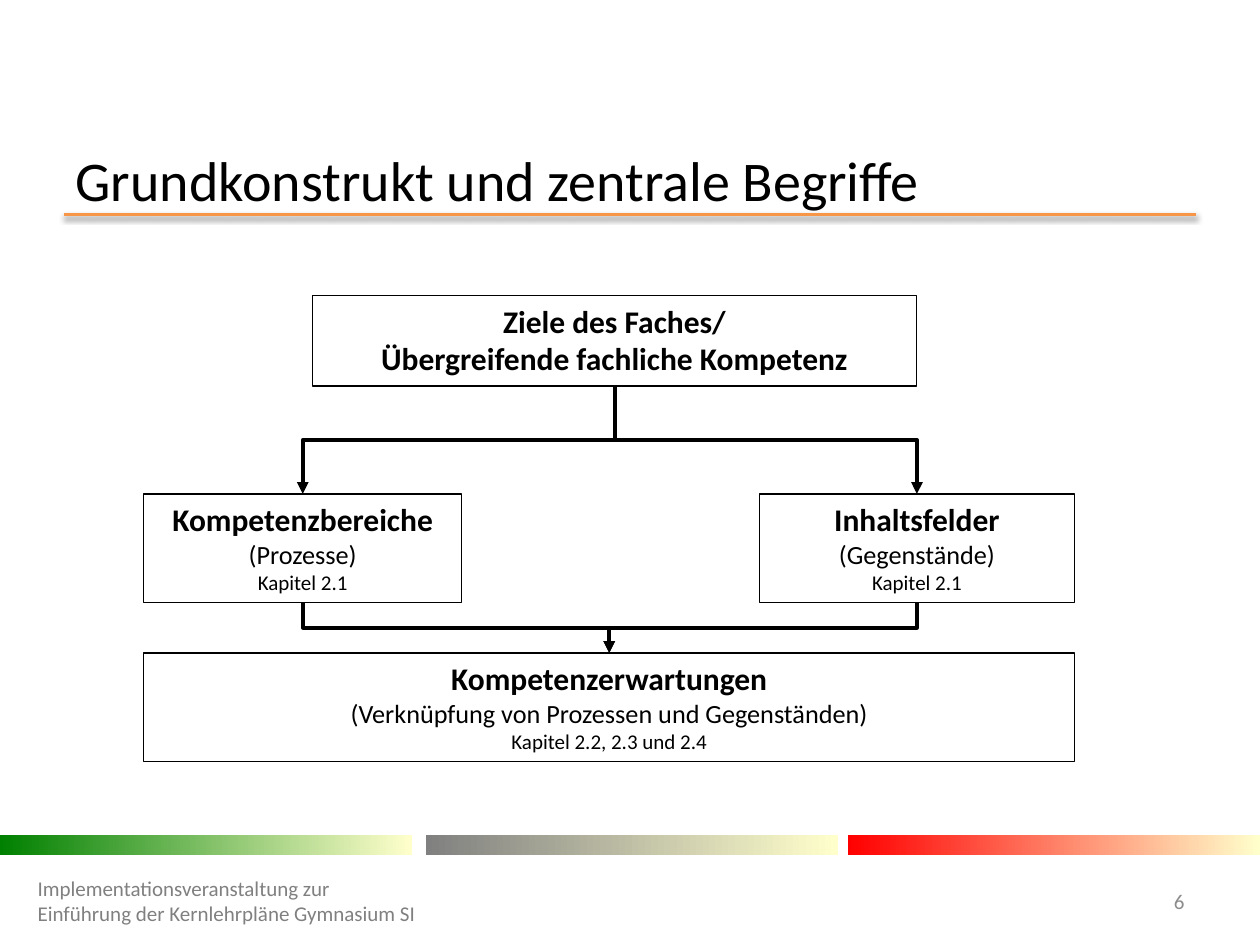
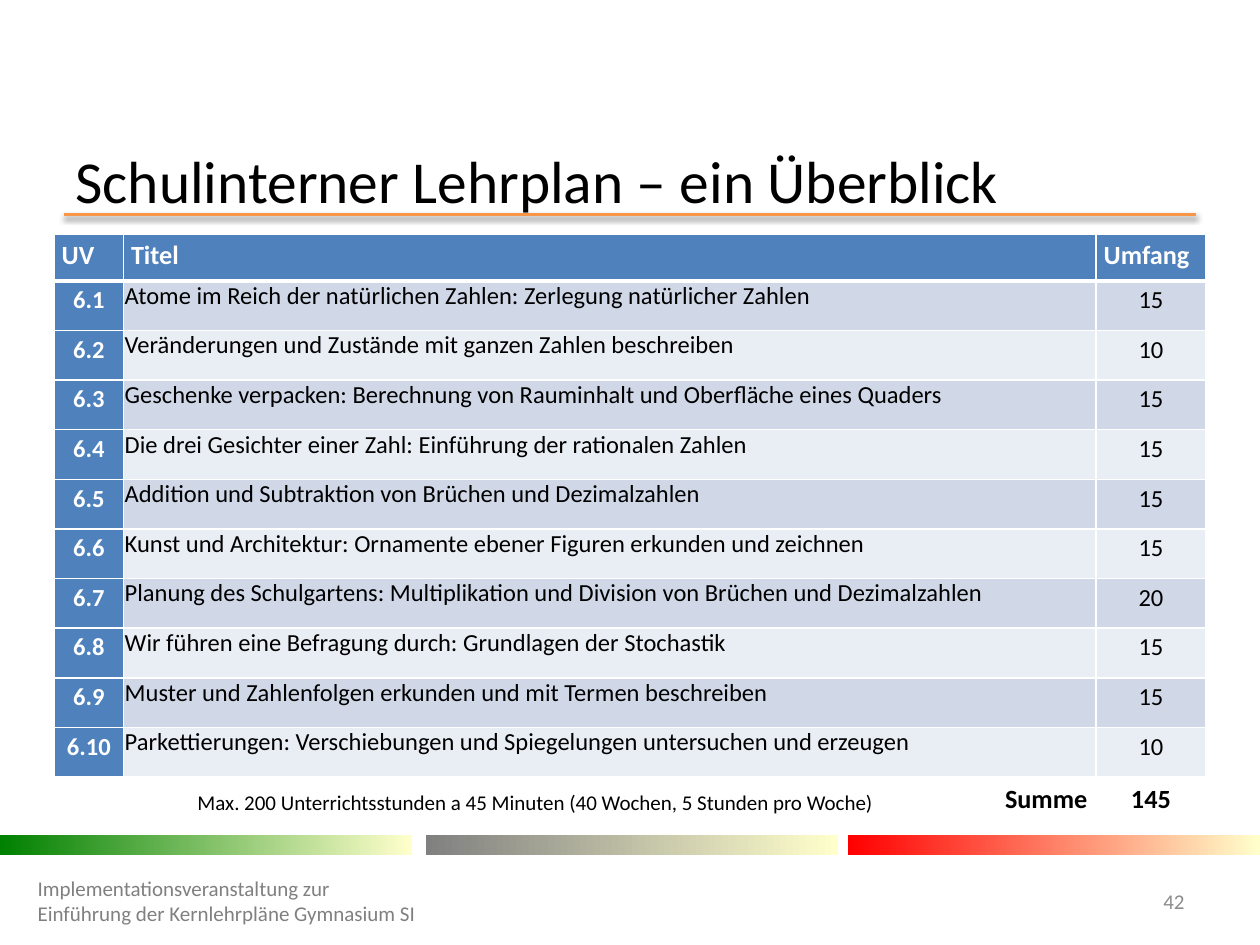
from lxml import etree
from pptx import Presentation, util as u
from pptx.dml.color import RGBColor
from pptx.enum import shapes, text
from pptx.oxml import ns

# The slide is a grid of 100 columns and 75 rows
WIDTH, HEIGHT = u.Inches(10), u.Inches(7.5)
COLUMNS, ROWS = 100, 75
FONT = "Calibri"
COLORS = {
    "ink": "000000", "white": "FFFFFF", "rule": "F79646",
    "footer": "808080", "number": "8C8C8C",
    "green": "008000", "gray": "808080", "red": "FF0000", "cream": "FFFFCC",
    "head": "4F81BD", "odd": "D0D8E8", "even": "E9EDF4",
}
FOOTER = "Implementationsveranstaltung zur Einführung der Kernlehrpläne Gymnasium SI"
LEFT, CENTER, RIGHT = text.PP_ALIGN.LEFT, text.PP_ALIGN.CENTER, text.PP_ALIGN.RIGHT
TOP, MIDDLE, BOTTOM = (text.MSO_ANCHOR.TOP, text.MSO_ANCHOR.MIDDLE,
                       text.MSO_ANCHOR.BOTTOM)
TOP_SITE, BOTTOM_SITE = 0, 2

UNITS = [
    ("6.1", "Atome im Reich der natürlichen Zahlen: Zerlegung natürlicher Zahlen", "15"),
    ("6.2", "Veränderungen und Zustände mit ganzen Zahlen beschreiben", "10"),
    ("6.3", "Geschenke verpacken: Berechnung von Rauminhalt und Oberfläche eines Quaders", "15"),
    ("6.4", "Die drei Gesichter einer Zahl: Einführung der rationalen Zahlen", "15"),
    ("6.5", "Addition und Subtraktion von Brüchen und Dezimalzahlen", "15"),
    ("6.6", "Kunst und Architektur: Ornamente ebener Figuren erkunden und zeichnen", "15"),
    ("6.7", "Planung des Schulgartens: Multiplikation und Division von Brüchen und Dezimalzahlen", "20"),
    ("6.8", "Wir führen eine Befragung durch: Grundlagen der Stochastik", "15"),
    ("6.9", "Muster und Zahlenfolgen erkunden und mit Termen beschreiben", "15"),
    ("6.10", "Parkettierungen: Verschiebungen und Spiegelungen untersuchen und erzeugen", "10"),
]


def col(count):
    return round(WIDTH * count / COLUMNS)


def row(count):
    return round(HEIGHT * count / ROWS)


def area(left, top, width, height):
    return col(left), row(top), col(width), row(height)


def color(name):
    return RGBColor.from_string(COLORS[name])


def format_font(font, size, ink="ink", bold=False):
    font.name, font.size, font.bold = FONT, u.Pt(size), bold
    font.color.rgb = color(ink)


def format_para(para, size, ink="ink", bold=False, align=LEFT):
    para.alignment = align
    format_font(para.font, size, ink, bold)


# Shared frame: title, rule, colour bands, footer
def add_label(page, place, words, ink, align=LEFT):
    frame = page.shapes.add_textbox(*area(*place)).text_frame
    frame.word_wrap = True
    frame.vertical_anchor = MIDDLE
    frame.text = words
    format_para(frame.paragraphs[0], 12, ink, align=align)


def set_effects(line):
    """Replace the theme's shadow by an own, empty effect list."""
    return etree.SubElement(line._element.spPr, ns.qn("a:effectLst"))


def add_rule(page):
    rule = page.shapes.add_connector(
        shapes.MSO_CONNECTOR.STRAIGHT, col(5.1), row(17.03), col(94.9), row(17.03))
    rule.line.color.rgb = color("rule")
    rule.line.width = u.Pt(2)
    shadow = etree.SubElement(set_effects(rule), ns.qn("a:outerShdw"), blurRad="40000",
                              dist="20000", dir="5400000", rotWithShape="0")
    tint = etree.SubElement(shadow, ns.qn("a:srgbClr"), val=COLORS["ink"])
    etree.SubElement(tint, ns.qn("a:alpha"), val="38000")


def add_bands(page):
    for left, start in ((0, "green"), (33.8, "gray"), (67.3, "red")):
        band = page.shapes.add_shape(shapes.MSO_SHAPE.RECTANGLE,
                                     *area(left, 66.3, 32.7, 1.6))
        band.shadow.inherit = False
        band.line.fill.background()
        band.fill.gradient()
        band.fill.gradient_angle = 0
        for stop, name in zip(band.fill.gradient_stops, (start, "cream")):
            stop.color.rgb = color(name)


def add_page(deck, heading, size, number):
    page = deck.slides.add_slide(deck.slide_layouts.get_by_name("Title Only"))
    title = page.shapes.title
    title.left, title.top, title.width, title.height = area(5, 12.3, 90, 3.9)
    frame = title.text_frame
    frame.text = heading
    frame.auto_size = text.MSO_AUTO_SIZE.NONE
    frame.vertical_anchor = MIDDLE
    format_para(frame.paragraphs[0], size)
    add_rule(page)
    add_bands(page)
    add_label(page, (2, 69.5, 32.4, 4), FOOTER, "footer")
    add_label(page, (88.6, 69.5, 6.4, 4), number, "number", RIGHT)
    return page


# Diagram parts
def add_box(page, place, lines, sizes=(18, 15, 12)):
    box = page.shapes.add_shape(shapes.MSO_SHAPE.RECTANGLE, *area(*place))
    box.shadow.inherit = False
    box.fill.background()
    box.line.color.rgb = color("ink")
    box.line.width = u.Pt(0.75)
    frame = box.text_frame
    frame.vertical_anchor = TOP
    frame.text = "\n".join(lines)
    for para, size in zip(frame.paragraphs, sizes):
        format_para(para, size, bold=size == 18, align=CENTER)
    return box


def add_arrow(page, upper, lower):
    """Elbow arrow from the bottom of one box to the top of another."""
    arrow = page.shapes.add_connector(shapes.MSO_CONNECTOR.ELBOW, 0, 0, 0, 0)
    arrow.begin_connect(upper, BOTTOM_SITE)
    arrow.end_connect(lower, TOP_SITE)
    start_x, end_x = upper.left + upper.width // 2, lower.left + lower.width // 2
    start_y, end_y = upper.top + upper.height, lower.top
    # The elbow leaves downwards, so its frame is turned by a quarter
    arrow.width, arrow.height = end_y - start_y, abs(end_x - start_x)
    arrow.left = (start_x + end_x - arrow.width) // 2
    arrow.top = (start_y + end_y - arrow.height) // 2
    turn = arrow._element.spPr.find(ns.qn("a:xfrm"))
    for flip in ("flipH", "flipV"):
        turn.attrib.pop(flip, None)
    if end_x < start_x:
        turn.set("rot", "5400000")
    else:
        turn.set("rot", "16200000")
        turn.set("flipH", "1")
    arrow.line.color.rgb = color("ink")
    arrow.line.width = u.Pt(2.25)
    etree.SubElement(arrow.line._get_or_add_ln(), ns.qn("a:tailEnd"), type="triangle")
    set_effects(arrow)


def build_concept_page(deck):
    page = add_page(deck, "Grundkonstrukt und zentrale Begriffe", 32, "6")
    goals = add_box(page, (24.8, 23.45, 47.95, 7.2),
                    ("Ziele des Faches/", "Übergreifende fachliche Kompetenz"), (18, 18))
    processes = add_box(page, (11.4, 39.2, 25.25, 8.6),
                        ("Kompetenzbereiche", "(Prozesse)", "Kapitel 2.1"))
    contents = add_box(page, (60.25, 39.2, 25.05, 8.6),
                       ("Inhaltsfelder", "(Gegenstände)", "Kapitel 2.1"))
    expectations = add_box(page, (11.4, 51.82, 73.9, 8.6),
                           ("Kompetenzerwartungen",
                            "(Verknüpfung von Prozessen und Gegenständen)",
                            "Kapitel 2.2, 2.3 und 2.4"))
    for branch in (processes, contents):
        add_arrow(page, goals, branch)
        add_arrow(page, branch, expectations)


# Table parts
def add_border(cell, side, points):
    line = etree.SubElement(cell._tc.get_or_add_tcPr(), ns.qn(f"a:{side}"),
                            w=str(u.Pt(points)))
    fill = etree.SubElement(line, ns.qn("a:solidFill"))
    etree.SubElement(fill, ns.qn("a:srgbClr"), val=COLORS["white"])


def fill_cell(cell, words, fill, size=14, ink="ink", bold=False, align=CENTER,
              spacing=1.15, inset=0.7, anchor=TOP, borders=(1, 1)):
    for side, points in zip(("lnL", "lnR", "lnT", "lnB"), (1, 1, *borders)):
        add_border(cell, side, points)
    cell.fill.solid()
    cell.fill.fore_color.rgb = color(fill)
    cell.margin_left = cell.margin_right = col(inset)
    cell.margin_top = cell.margin_bottom = 0
    cell.vertical_anchor = anchor
    cell.text = words
    para = cell.text_frame.paragraphs[0]
    para.alignment = align
    if spacing:
        para.line_spacing = spacing
    # Run fonts take precedence over the text format of the table style
    for span in para.runs:
        format_font(span.font, size, ink, bold)
    if not words:
        etree.SubElement(para._p, ns.qn("a:endParaRPr"), sz=str(size * 100))


def build_overview_page(deck):
    page = add_page(deck, "Schulinterner Lehrplan – ein Überblick", 34, "42")
    last = len(UNITS) + 1
    table = page.shapes.add_table(last + 1, 4, *area(4.3, 18.6, 91.3, 46.2)).table
    table.horz_banding = False
    for column, width in zip(table.columns, (5.5, 65.4, 11.8, 8.7)):
        column.width = col(width)
    unit_height = (46.2 - 3.7 - 3.1) / len(UNITS)
    for line, height in zip(table.rows, [3.7] + [unit_height] * len(UNITS) + [3.1]):
        line.height = row(height)
    for index in range(last):
        table.cell(index, 1).merge(table.cell(index, 2))

    # Heading row
    for index, words in zip((0, 1, 3), ("UV", "Titel", "Umfang")):
        fill_cell(table.cell(0, index), words, "head", 15, "white", True, LEFT,
                  inset=0.6, borders=(1, 3))

    # One row for each teaching unit
    for index, (unit, topic, hours) in enumerate(UNITS, 1):
        shade = "odd" if index % 2 else "even"
        borders = (3 if index == 1 else 1, 1)
        fill_cell(table.cell(index, 0), unit, "head", ink="white", bold=True,
                  borders=borders)
        fill_cell(table.cell(index, 1), topic, shade, align=LEFT, spacing=None,
                  inset=0.1, borders=borders)
        fill_cell(table.cell(index, 3), hours, shade, borders=borders)

    # Sum row
    note = "Max. 200 Unterrichtsstunden a 45 Minuten (40 Wochen, 5 Stunden pro Woche)"
    sums = (("", 12, False, CENTER), (note, 12, False, CENTER),
            ("Summe", 15, True, RIGHT), ("145", 15, True, CENTER))
    for index, (words, size, bold, align) in enumerate(sums):
        fill_cell(table.cell(last, index), words, "white", size, bold=bold,
                  align=align, anchor=BOTTOM)


def main():
    deck = Presentation()
    deck.slide_width, deck.slide_height = WIDTH, HEIGHT
    build_concept_page(deck)
    build_overview_page(deck)
    deck.save("out.pptx")


if __name__ == "__main__":
    main()
